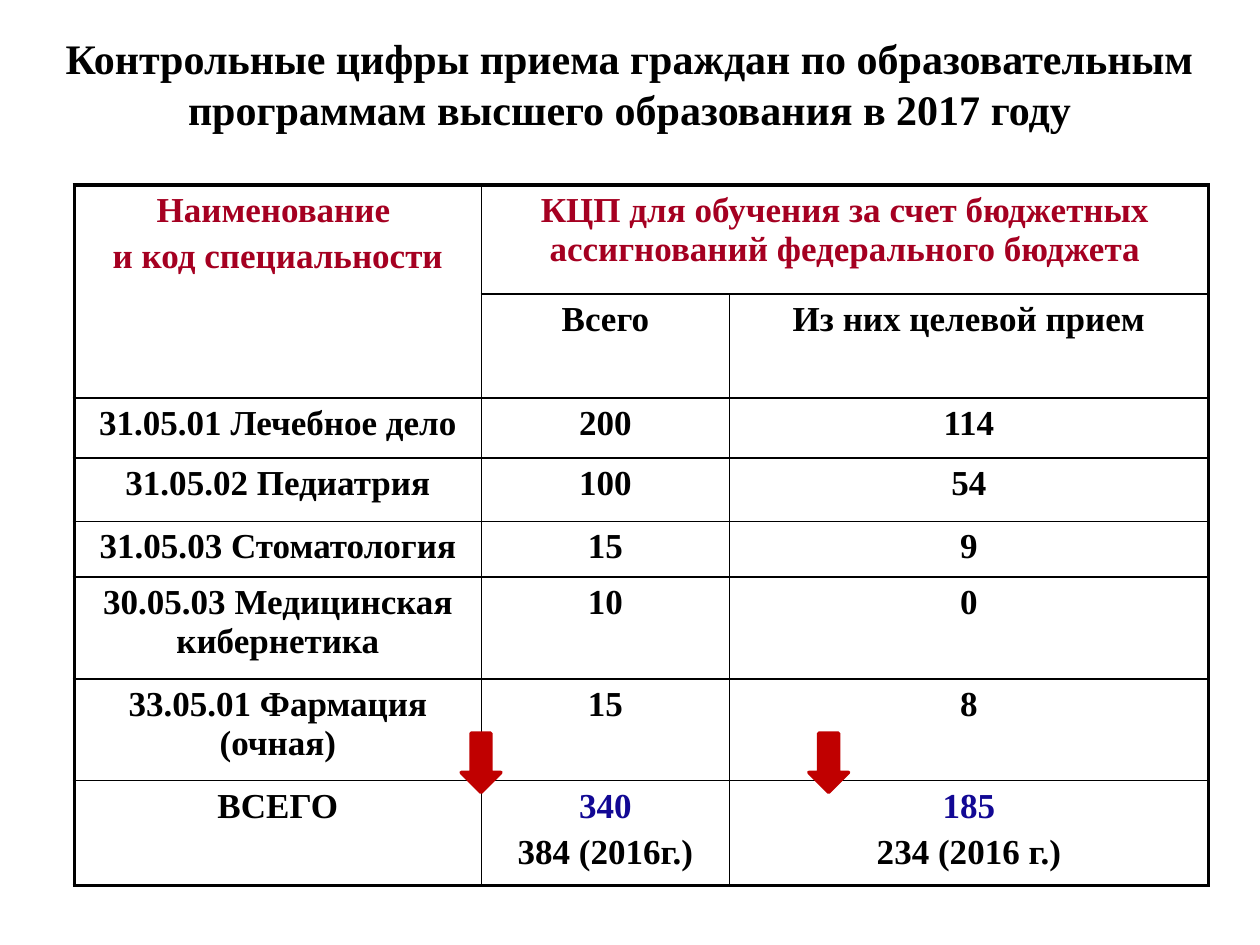
from dataclasses import dataclass

import lxml.etree
import pptx
import pptx.dml.color
import pptx.enum.shapes
import pptx.enum.text
import pptx.oxml.ns
import pptx.table
import pptx.util

Pt = pptx.util.Pt
FONT = "Times New Roman"
COLORS = {
    "text": "000000",
    "heading": "A50021",
    "total": "120894",
    "arrow": "C00000",
}
COLUMN_WIDTHS = [232.6, 141.8, 273.6]
ROW_HEIGHTS = [62.3, 55.4, 34.3, 36.3, 31.7, 58.3, 58.3, 60]
OUTER_BORDER, INNER_BORDER = 2.25, 1
ARROW_LEFTS = [263.5, 462.2]


@dataclass
class Entry:
    row: int
    column: int
    lines: list[str]
    first_color: str = "text"
    other_color: str = "text"
    first_indent: float = 0


ADMISSIONS = [
    ("31.05.01 Лечебное дело", "200", "114"),
    ("31.05.02 Педиатрия", "100", "54"),
    ("31.05.03 Стоматология", "15", "9"),
    ("30.05.03 Медицинская кибернетика", "10", "0"),
    ("33.05.01 Фармация (очная)", "15", "8"),
]
ENTRIES = [
    Entry(0, 0, ["Наименование ", "и код специальности"], "heading", "heading"),
    Entry(0, 1, ["КЦП для обучения за счет бюджетных ассигнований федерального бюджета"], "heading"),
    Entry(1, 1, ["Всего"]),
    Entry(1, 2, ["Из них целевой прием"]),
    *[
        Entry(row, column, [value])
        for row, admission in enumerate(ADMISSIONS, start=2)
        for column, value in enumerate(admission)
    ],
    Entry(7, 0, ["ВСЕГО"]),
    Entry(7, 1, ["340", "384 (2016г.)"], "total"),
    Entry(7, 2, ["185", "234 (2016 г.)"], "total", first_indent=-15),
]


def rgb(name: str) -> pptx.dml.color.RGBColor:
    return pptx.dml.color.RGBColor.from_string(COLORS[name])


def format_paragraph(paragraph, size: float, color: str) -> None:
    paragraph.alignment = pptx.enum.text.PP_ALIGN.CENTER
    for run in paragraph.runs:
        run.font.name = FONT
        run.font.size = Pt(size)
        run.font.bold = True
        run.font.color.rgb = rgb(color)


def set_borders(cell: pptx.table._Cell, widths: dict[str, float]) -> None:
    qn = pptx.oxml.ns.qn
    properties = cell._tc.get_or_add_tcPr()
    for position, (side, width) in enumerate(widths.items()):
        line = lxml.etree.Element(qn(f"a:ln{side}"), w=str(Pt(width)))
        fill = lxml.etree.SubElement(line, qn("a:solidFill"))
        lxml.etree.SubElement(fill, qn("a:srgbClr"), val=COLORS["text"])
        properties.insert(position, line)


def fill_cell(table: pptx.table.Table, entry: Entry) -> None:
    cell = table.cell(entry.row, entry.column)
    cell.text_frame.text = "\n".join(entry.lines)
    for number, paragraph in enumerate(cell.text_frame.paragraphs):
        format_paragraph(paragraph, 20, entry.other_color if number else entry.first_color)
        if number:
            paragraph.space_before = Pt(4)
        elif entry.first_indent:
            paragraph._p.get_or_add_pPr().set("indent", str(Pt(entry.first_indent)))
    last_column = entry.column + cell.span_width == len(COLUMN_WIDTHS)
    last_row = entry.row + cell.span_height == len(ROW_HEIGHTS)
    outer_sides = {"L": entry.column == 0, "R": last_column, "T": entry.row == 0, "B": last_row}
    cell.fill.background()
    set_borders(
        cell,
        {side: OUTER_BORDER if outer else INNER_BORDER for side, outer in outer_sides.items()},
    )


def add_admission_table(slide) -> None:
    table = slide.shapes.add_table(
        len(ROW_HEIGHTS), len(COLUMN_WIDTHS),
        Pt(42.5), Pt(105.8), Pt(sum(COLUMN_WIDTHS)), Pt(sum(ROW_HEIGHTS)),
    ).table
    table.first_row = False
    table.horz_banding = False
    for column, width in zip(table.columns, COLUMN_WIDTHS):
        column.width = Pt(width)
    for row, height in zip(table.rows, ROW_HEIGHTS):
        row.height = Pt(height)
    table.cell(0, 0).merge(table.cell(1, 0))
    table.cell(0, 1).merge(table.cell(0, 2))
    for entry in ENTRIES:
        fill_cell(table, entry)


def add_title(slide) -> None:
    title = slide.shapes.title
    title.left, title.top, title.width, title.height = Pt(25.2), Pt(15.1), Pt(668.9), Pt(65.5)
    frame = title.text_frame
    frame.text = "Контрольные цифры приема граждан по образовательным программам высшего образования в 2017 году"
    frame.word_wrap = True
    frame.auto_size = pptx.enum.text.MSO_AUTO_SIZE.SHAPE_TO_FIT_TEXT
    frame.vertical_anchor = pptx.enum.text.MSO_ANCHOR.TOP
    format_paragraph(frame.paragraphs[0], 24, "text")


def add_decline_arrow(slide, left: float) -> None:
    arrow = slide.shapes.add_shape(
        pptx.enum.shapes.MSO_SHAPE.DOWN_ARROW, Pt(left), Pt(419), Pt(22.7), Pt(33.8)
    )
    arrow.shadow.inherit = False
    arrow.fill.solid()
    arrow.fill.fore_color.rgb = rgb("arrow")
    arrow.line.color.rgb = rgb("arrow")
    arrow.line.width = Pt(2)


def main() -> None:
    presentation = pptx.Presentation()
    presentation.slide_width, presentation.slide_height = Pt(720), Pt(540)
    slide = presentation.slides.add_slide(presentation.slide_layouts[5])
    add_title(slide)
    add_admission_table(slide)
    for left in ARROW_LEFTS:
        add_decline_arrow(slide, left)
    presentation.save("out.pptx")


if __name__ == "__main__":
    main()
